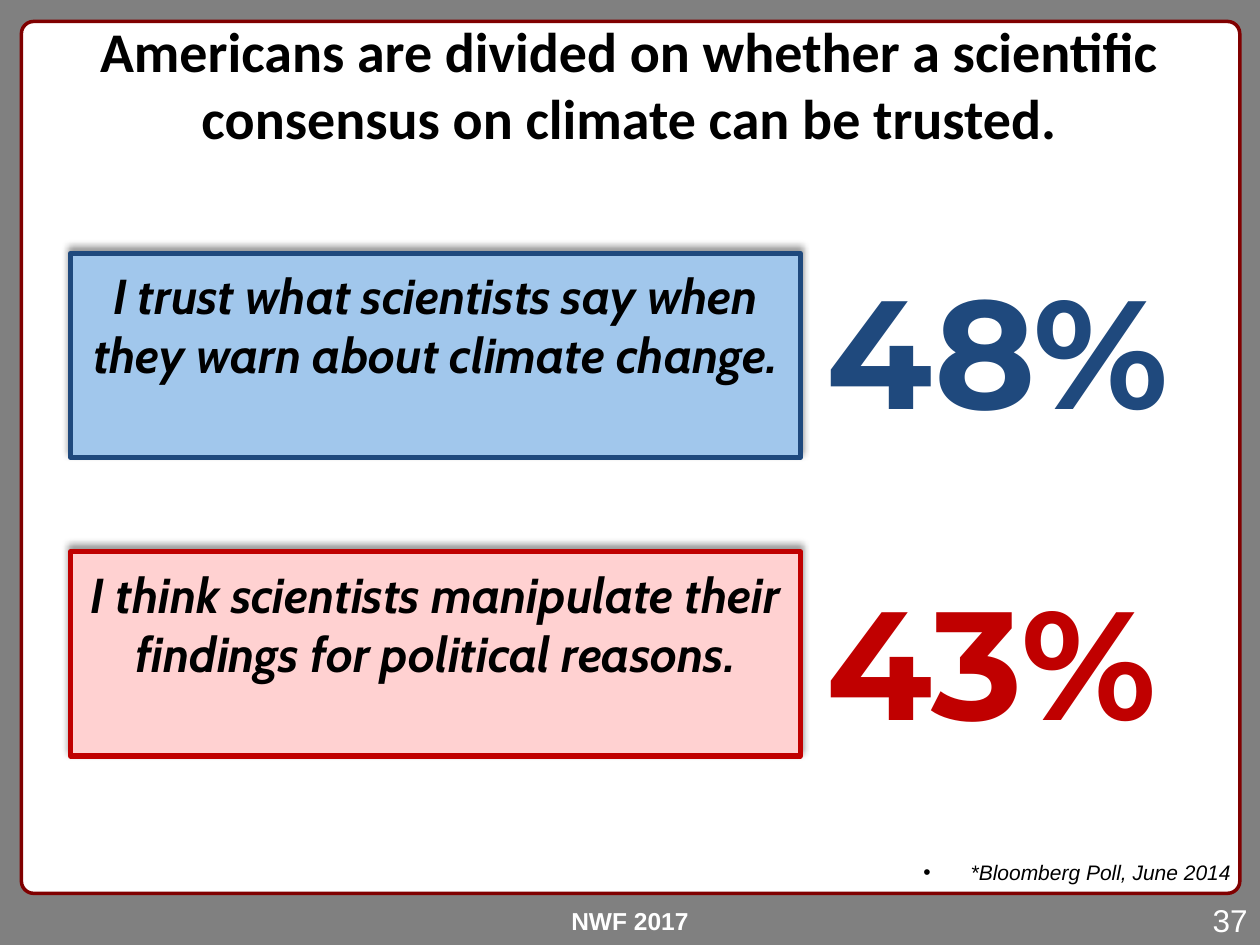
import dataclasses

import lxml.etree
import pptx
import pptx.dml.color
import pptx.enum.shapes
import pptx.enum.text
import pptx.oxml
import pptx.oxml.ns
import pptx.util

ALIGN = pptx.enum.text.PP_ALIGN
ANCHOR = pptx.enum.text.MSO_ANCHOR
SHAPE = pptx.enum.shapes.MSO_SHAPE
NS = pptx.oxml.ns.nsdecls("a")


@dataclasses.dataclass(frozen=True)
class Theme:
    """Colours, fonts and type sizes of the slide."""
    backdrop: str = "808080"
    panel: str = "FFFFFF"
    panel_line: str = "800000"
    ink: str = "000000"
    trust: tuple = ("1F497D", "A1C7EC")
    distrust: tuple = ("C00000", "FFD1D1")
    plain: str = "Arial"
    title: str = "Calibri"
    quote: str = "Cabin"
    figure: str = "Montserrat"
    title_size: int = 32
    quote_size: int = 28
    figure_size: int = 88
    page_size: int = 18
    footer_size: int = 14
    source_size: int = 12


THEME = Theme()


def rgb(value):
    return pptx.dml.color.RGBColor.from_string(value)


def inches(box):
    return [pptx.util.Inches(v) for v in box]


def place(sp, box):
    sp.left, sp.top, sp.width, sp.height = inches(box)


def write(sp, text, font, size, color, align=ALIGN.CENTER, bold=False,
          italic=False, anchor=ANCHOR.TOP, wrap=True):
    """Set the one paragraph of a shape and return its run."""
    tf = sp.text_frame
    tf.text = text
    tf.word_wrap = wrap
    tf.auto_size = pptx.enum.text.MSO_AUTO_SIZE.NONE
    tf.vertical_anchor = anchor
    p = tf.paragraphs[0]
    p.alignment = align
    r = p.runs[0]
    r.font.name, r.font.size = font, pptx.util.Pt(size)
    r.font.bold, r.font.italic = bold, italic
    r.font.color.rgb = rgb(color)
    return r


def add_box(s, kind, box, fill, line, width):
    sp = s.shapes.add_shape(kind, *inches(box))
    sp.shadow.inherit = False
    sp.fill.solid()
    sp.fill.fore_color.rgb = rgb(fill)
    sp.line.color.rgb = rgb(line)
    sp.line.width = pptx.util.Pt(width)
    return sp


def add_upward_shadow(sp):
    effects = sp._element.spPr.find(pptx.oxml.ns.qn("a:effectLst"))
    effects.append(pptx.oxml.parse_xml(
        f'<a:outerShdw {NS} blurRad="{pptx.util.Pt(4)}" dist="{pptx.util.Pt(3)}" '
        'dir="16200000" rotWithShape="0"><a:srgbClr val="000000">'
        '<a:alpha val="40000"/></a:srgbClr></a:outerShdw>'))


def outline_text(r, color):
    r._r.get_or_add_rPr().insert(0, pptx.oxml.parse_xml(
        f'<a:ln {NS} w="{pptx.util.Pt(1)}"><a:solidFill>'
        f'<a:srgbClr val="{color}"/></a:solidFill></a:ln>'))


def add_frame(s, box):
    """Grey backdrop with a rounded panel behind everything else."""
    s.background.fill.solid()
    s.background.fill.fore_color.rgb = rgb(THEME.backdrop)
    sp = add_box(s, SHAPE.ROUNDED_RECTANGLE, box, THEME.panel, THEME.panel_line, 2)
    sp.adjustments[0] = 0.014
    s.shapes._spTree.insert(2, sp._element)


def add_footer(s, box):
    x, y, w, h = box
    label = s.shapes.add_textbox(*inches((x + w * 0.24, y + 0.04, w * 0.52, h)))
    write(label, "NWF 2017", THEME.plain, THEME.footer_size, THEME.panel, bold=True)
    number = s.shapes.add_textbox(*inches((x + w * 0.85, y, w * 0.15, h)))
    write(number, "37", THEME.plain, THEME.page_size, THEME.panel, ALIGN.RIGHT)


def set_title(s, box):
    sp = s.shapes.title
    place(sp, box)
    write(sp, "Americans are divided on whether a scientific consensus on "
          "climate can be trusted.", THEME.title, THEME.title_size, THEME.ink,
          bold=True)


def set_source(s, box):
    sp = s.placeholders[1]
    place(sp, box)
    pPr = sp.text_frame.paragraphs[0]._p.get_or_add_pPr()
    pPr.set("marL", "0")
    pPr.set("indent", "0")
    lxml.etree.SubElement(pPr, pptx.oxml.ns.qn("a:buNone"))
    write(sp, "*Bloomberg Poll, June 2014", THEME.plain, THEME.source_size,
          THEME.ink, ALIGN.RIGHT, italic=True, anchor=ANCHOR.MIDDLE)
    sp.text_frame.paragraphs[0].space_before = pptx.util.Pt(0)


def add_opinion(s, box, quote, share, colors, drop):
    """Quote card with its share of answers, the share lowered by drop."""
    x, y, w, h = box
    dark, light = colors
    card_w = w * 0.645
    card = add_box(s, SHAPE.RECTANGLE, (x, y, card_w, h), light, dark, 3)
    add_upward_shadow(card)
    tf = card.text_frame
    tf.margin_left = tf.margin_right = pptx.util.Inches(0.1)
    tf.margin_top = tf.margin_bottom = pptx.util.Inches(0.1)
    write(card, quote, THEME.quote, THEME.quote_size, THEME.ink,
          bold=True, italic=True)
    left = x + card_w + 0.11
    figure = s.shapes.add_textbox(*inches((left, y + drop, x + w - left, 1.58)))
    r = write(figure, share, THEME.figure, THEME.figure_size, dark, ALIGN.LEFT,
              bold=True, wrap=False)
    outline_text(r, light)


def main():
    prs = pptx.Presentation()
    prs.slide_width, prs.slide_height = inches((10, 7.5))
    s = prs.slides.add_slide(prs.slide_layouts[1])
    add_frame(s, (0.17, 0.17, 9.67, 6.92))
    add_footer(s, (0, 7.1, 10, 0.4))
    set_title(s, (0.13, 0.08, 9.73, 1.09))
    set_source(s, (3.45, 6.73, 6.42, 0.38))
    opinions = [
        ("I trust what scientists say when they warn about climate change.",
         "48%", THEME.trust, -0.03),
        ("I think scientists manipulate their findings for political reasons.",
         "43%", THEME.distrust, 0.07),
    ]
    for row, opinion in enumerate(opinions):
        add_opinion(s, (0.56, 2.01 + row * 2.37, 8.98, 1.62), *opinion)
    prs.save("out.pptx")


if __name__ == "__main__":
    main()
